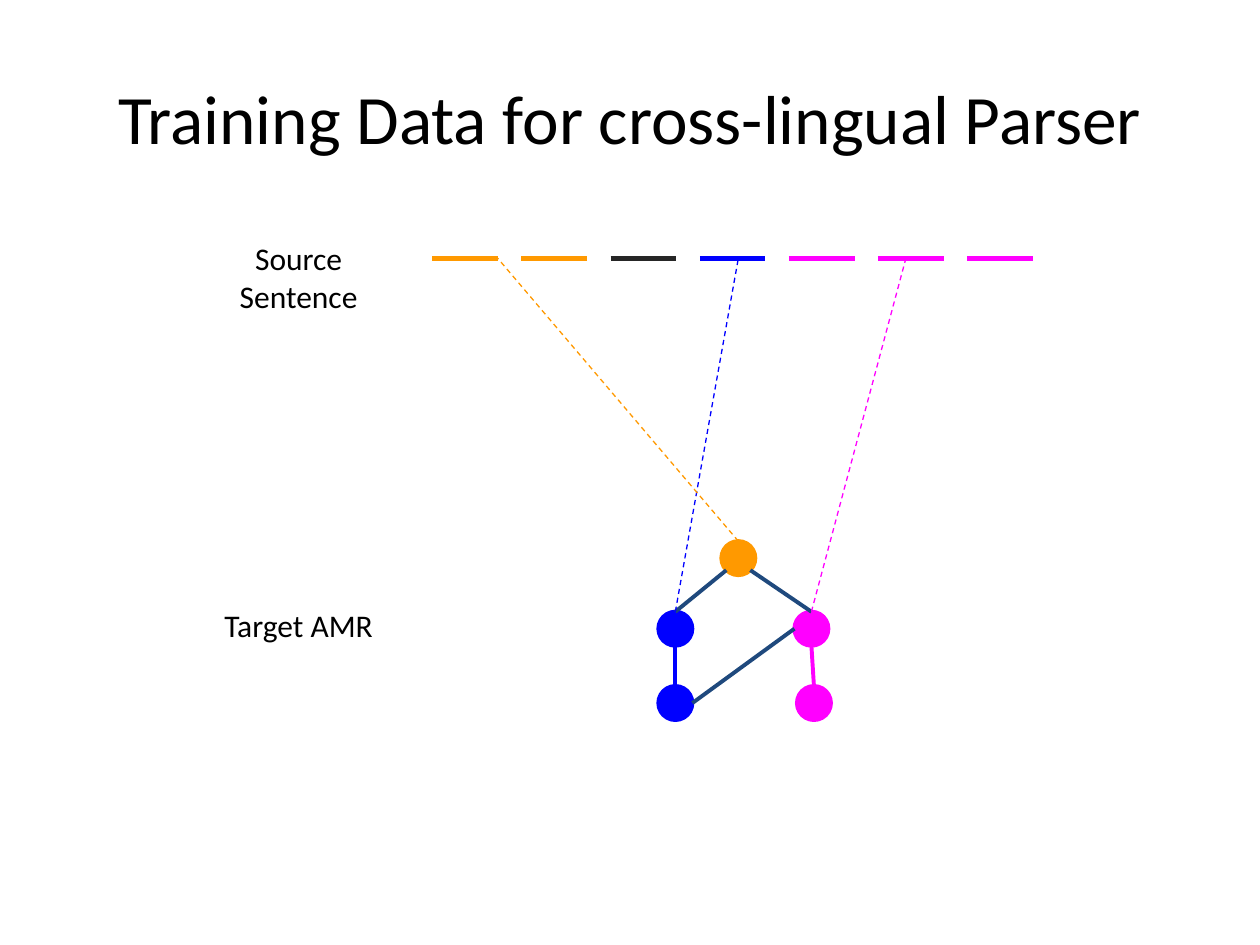
from lxml.etree import SubElement
from pptx import Presentation
from pptx.dml.color import RGBColor
from pptx.enum.dml import MSO_LINE
from pptx.enum.shapes import MSO_CONNECTOR, MSO_SHAPE
from pptx.enum.text import MSO_ANCHOR, PP_ALIGN
from pptx.oxml.ns import qn
from pptx.util import Inches, Pt

BLACK = RGBColor(0x00, 0x00, 0x00)
CHARCOAL = RGBColor(0x26, 0x26, 0x26)
NAVY = RGBColor(0x1F, 0x49, 0x7D)
ORANGE = RGBColor(0xFF, 0x99, 0x00)
BLUE = RGBColor(0x00, 0x00, 0xFF)
MAGENTA = RGBColor(0xFF, 0x00, 0xFF)

deck = Presentation()
deck.slide_width, deck.slide_height = Inches(10), Inches(7.5)
slide = deck.slides.add_slide(deck.slide_layouts[5])


def write(frame, text, size):
    frame.word_wrap = True
    para = frame.paragraphs[0]
    para.alignment = PP_ALIGN.CENTER
    span = para.add_run()
    span.text = text
    span.font.name = "Calibri"
    span.font.size = Pt(size)
    span.font.color.rgb = BLACK


def connect(start, end, color, width, dash=None):
    ends = [Inches(value) for value in (*start, *end)]
    line = slide.shapes.add_connector(MSO_CONNECTOR.STRAIGHT, *ends)
    line.line.color.rgb = color
    line.line.width = Pt(width)
    if dash:
        line.line.dash_style = dash
    SubElement(line._element.spPr, qn("a:effectLst"))


# Title
title = slide.shapes.title
title.left, title.top = Inches(0.5), Inches(0.3)
title.width, title.height = Inches(9), Inches(1.25)
title.text_frame.vertical_anchor = MSO_ANCHOR.MIDDLE
write(title.text_frame, "Training Data for cross-lingual Parser", 39.6)

# Source sentence: one dash per word, at an equal pitch
word_left, word_top, word_width, word_pitch = 3.43, 2.05, 0.52, 0.708
word_colors = [ORANGE, ORANGE, CHARCOAL, BLUE, MAGENTA, MAGENTA, MAGENTA]
for column, color in enumerate(word_colors):
    left = word_left + column * word_pitch
    connect((left, word_top), (left + word_width, word_top), color, 3)

# Target AMR: nodes given by their centres
diameter = 0.27
radius = diameter / 2
root_row, middle_row, leaf_row = 4.43, 4.99, 5.58
nodes = {
    "root": (5.86, root_row, ORANGE),
    "blue parent": (5.36, middle_row, BLUE),
    "blue leaf": (5.36, leaf_row, BLUE),
    "magenta parent": (6.44, middle_row, MAGENTA),
    "magenta leaf": (6.46, leaf_row, MAGENTA),
}
top, bottom, left, right = {}, {}, {}, {}
for name, (x, y, color) in nodes.items():
    node = slide.shapes.add_shape(
        MSO_SHAPE.OVAL, Inches(x - radius), Inches(y - radius),
        Inches(diameter), Inches(diameter))
    node.shadow.inherit = False
    node.fill.solid()
    node.fill.fore_color.rgb = color
    node.line.color.rgb = color
    node.line.width = Pt(2.25)
    top[name], bottom[name] = (x, y - radius), (x, y + radius)
    left[name], right[name] = (x - radius, y), (x + radius, y)

# Graph edges; those from the root leave on its lower diagonals
root_x = nodes["root"][0]
diagonal = radius * 0.5 ** 0.5
edges = [
    ((root_x - diagonal, root_row + diagonal), top["blue parent"], NAVY),
    ((root_x + diagonal, root_row + diagonal), top["magenta parent"], NAVY),
    (bottom["blue parent"], top["blue leaf"], BLUE),
    (bottom["magenta parent"], top["magenta leaf"], MAGENTA),
    (left["magenta parent"], right["blue leaf"], NAVY),
]
for start, end, color in edges:
    connect(start, end, color, 2.25)

# Alignments from words to graph nodes
alignments = [("blue parent", 5.86, BLUE), ("root", 3.95, ORANGE),
              ("magenta parent", 7.19, MAGENTA)]
for name, word_x, color in alignments:
    connect(top[name], (word_x, word_top), color, 0.75, MSO_LINE.DASH)

# Row labels
for text, label_top in [("Source Sentence", 1.8), ("Target AMR", 4.71)]:
    box = slide.shapes.add_textbox(
        Inches(1.46), Inches(label_top), Inches(1.82), Inches(0.5))
    frame = box.text_frame
    frame.margin_left = frame.margin_right = Inches(0.1)
    frame.margin_top = frame.margin_bottom = Inches(0.1)
    write(frame, text, 18)

deck.save("out.pptx")
